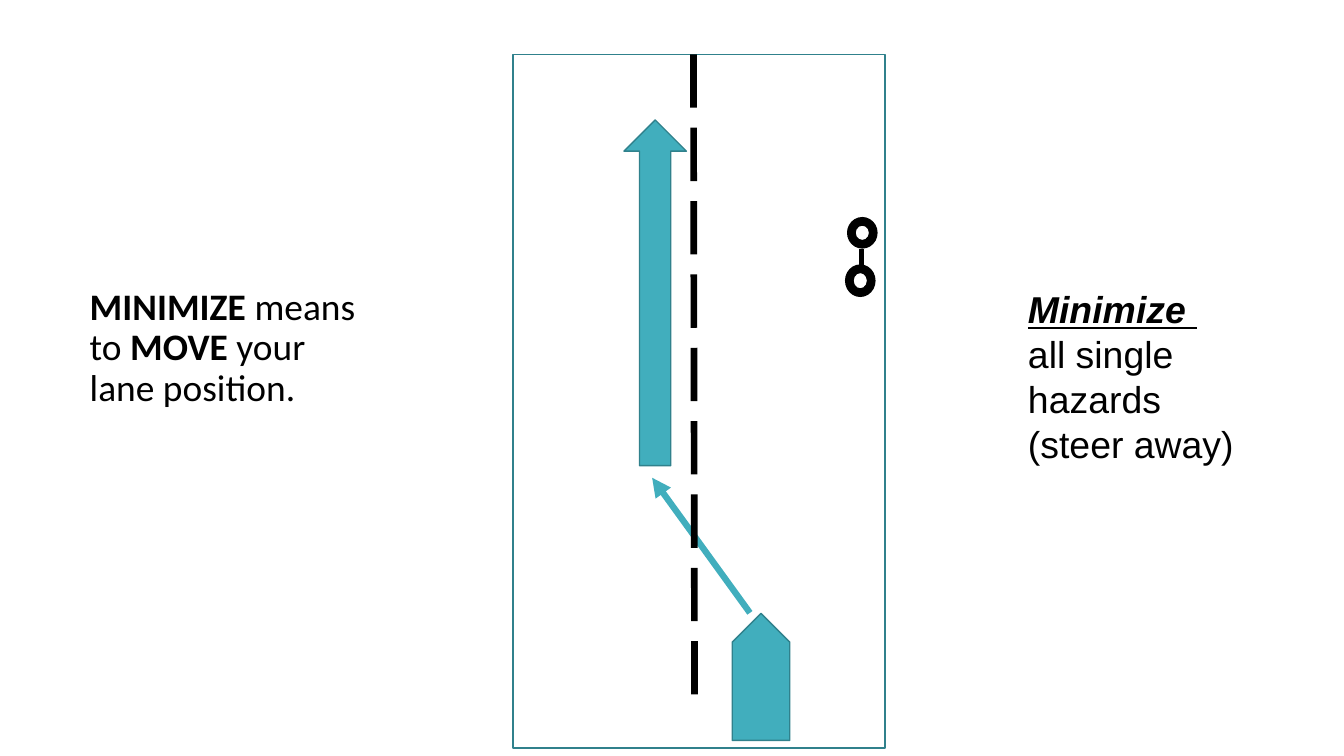
from typing import NamedTuple, Optional

from lxml.etree import SubElement
from pptx import Presentation
from pptx.dml.color import RGBColor
from pptx.enum.dml import MSO_LINE
from pptx.enum.shapes import MSO_CONNECTOR, MSO_SHAPE
from pptx.enum.text import MSO_ANCHOR, MSO_AUTO_SIZE
from pptx.oxml.ns import qn
from pptx.util import Inches, Pt

WIDTH, HEIGHT = Inches(13.33), Inches(7.5)
COLUMNS, ROWS = 160, 90
BLACK, WHITE, TEAL, DARK_TEAL = "000000", "FFFFFF", "41AEBD", "30818C"
TEXT_SIZE = 26.7


class Area(NamedTuple):
    column: float
    row: float
    columns: float
    rows: float


class Figure(NamedTuple):
    preset: MSO_SHAPE
    area: Area
    fill: str
    outline: str
    rotation: float = 0


class Stroke(NamedTuple):
    start: tuple[float, float]
    end: tuple[float, float]
    color: str
    weight: float
    dash: Optional[MSO_LINE] = None
    arrow: bool = False


class Span(NamedTuple):
    text: str
    bold: bool = False
    italic: bool = False
    underline: bool = False


FIGURES = [
    Figure(MSO_SHAPE.RECTANGLE, Area(61.08, 6.48, 44.28, 82.56), WHITE, DARK_TEAL),
    Figure(MSO_SHAPE.PENTAGON, Area(83.04, 77.16, 15.12, 6.84), TEAL, DARK_TEAL, 270),
    Figure(MSO_SHAPE.DONUT, Area(100.92, 25.92, 3.48, 3.6), BLACK, BLACK),
    Figure(MSO_SHAPE.DONUT, Area(100.68, 31.56, 3.48, 3.72), BLACK, BLACK),
    Figure(MSO_SHAPE.UP_ARROW, Area(74.28, 14.28, 7.44, 41.16), TEAL, DARK_TEAL),
]
STROKES = [
    Stroke((102.6, 29.64), (102.6, 31.56), BLACK, 3.5),
    Stroke((89.28, 72.96), (77.64, 56.88), TEAL, 4.5, arrow=True),
    Stroke((82.56, 6.48), (82.68, 82.8), BLACK, 4.75, dash=MSO_LINE.LONG_DASH),
]
MOVE_AREA = Area(9.48, 33.72, 36, 22.68)
MOVE_TEXT = [[Span("MINIMIZE", bold=True), Span(" means to "),
              Span("MOVE", bold=True), Span(" your lane position.")]]
HAZARD_AREA = Area(121.2, 33.48, 29.28, 22.8)
HAZARD_TEXT = [[Span("Minimize ", True, True, True)],
               [Span("all single hazards")], [Span("(steer away)")]]


def across(columns: float) -> int:
    return round(WIDTH * columns / COLUMNS)


def down(rows: float) -> int:
    return round(HEIGHT * rows / ROWS)


def place(area: Area) -> tuple[int, int, int, int]:
    return across(area.column), down(area.row), across(area.columns), down(area.rows)


def color(value: str) -> RGBColor:
    return RGBColor.from_string(value)


def draw_figure(page, figure: Figure) -> None:
    shape = page.shapes.add_shape(figure.preset, *place(figure.area))
    shape.rotation = figure.rotation
    shape.shadow.inherit = False
    shape.fill.solid()
    shape.fill.fore_color.rgb = color(figure.fill)
    shape.line.color.rgb = color(figure.outline)
    shape.line.width = Pt(1)


def draw_stroke(page, stroke: Stroke) -> None:
    (start_column, start_row), (end_column, end_row) = stroke.start, stroke.end
    connector = page.shapes.add_connector(
        MSO_CONNECTOR.STRAIGHT, across(start_column), down(start_row),
        across(end_column), down(end_row))
    connector.line.color.rgb = color(stroke.color)
    connector.line.width = Pt(stroke.weight)
    if stroke.dash:
        connector.line.dash_style = stroke.dash
    properties = connector.element.spPr
    if stroke.arrow:
        SubElement(properties.find(qn("a:ln")), qn("a:tailEnd"), type="triangle")
    SubElement(properties, qn("a:effectLst"))


def write(box, lines: list[list[Span]], font: str) -> None:
    frame = box.text_frame
    frame.word_wrap = True
    frame.vertical_anchor = MSO_ANCHOR.TOP
    frame.text = "\n".join("" for _ in lines)
    for paragraph, spans in zip(frame.paragraphs, lines):
        for span in spans:
            run = paragraph.add_run()
            run.text = span.text
            run.font.name = font
            run.font.size = Pt(TEXT_SIZE)
            run.font.color.rgb = color(BLACK)
            run.font.bold = span.bold
            run.font.italic = span.italic
            run.font.underline = span.underline


def write_body(page) -> None:
    body = page.placeholders[1]
    body.left, body.top, body.width, body.height = place(MOVE_AREA)
    write(body, MOVE_TEXT, "Calibri")
    body.text_frame.auto_size = MSO_AUTO_SIZE.NONE
    paragraph = body.text_frame.paragraphs[0]
    paragraph.line_spacing = 0.9
    paragraph.space_before = Pt(0)
    properties = paragraph._p.get_or_add_pPr()
    properties.set("marL", "0")
    properties.set("indent", "0")
    SubElement(properties, qn("a:buNone"))


def main() -> None:
    deck = Presentation()
    deck.slide_width, deck.slide_height = WIDTH, HEIGHT
    page = deck.slides.add_slide(deck.slide_layouts[1])
    title = page.shapes.title.element
    title.getparent().remove(title)
    write_body(page)
    hazard_box = page.shapes.add_textbox(*place(HAZARD_AREA))
    write(hazard_box, HAZARD_TEXT, "Arial")
    hazard_box.text_frame.auto_size = MSO_AUTO_SIZE.SHAPE_TO_FIT_TEXT
    for figure in FIGURES:
        draw_figure(page, figure)
    for stroke in STROKES:
        draw_stroke(page, stroke)
    deck.save("out.pptx")


if __name__ == "__main__":
    main()
